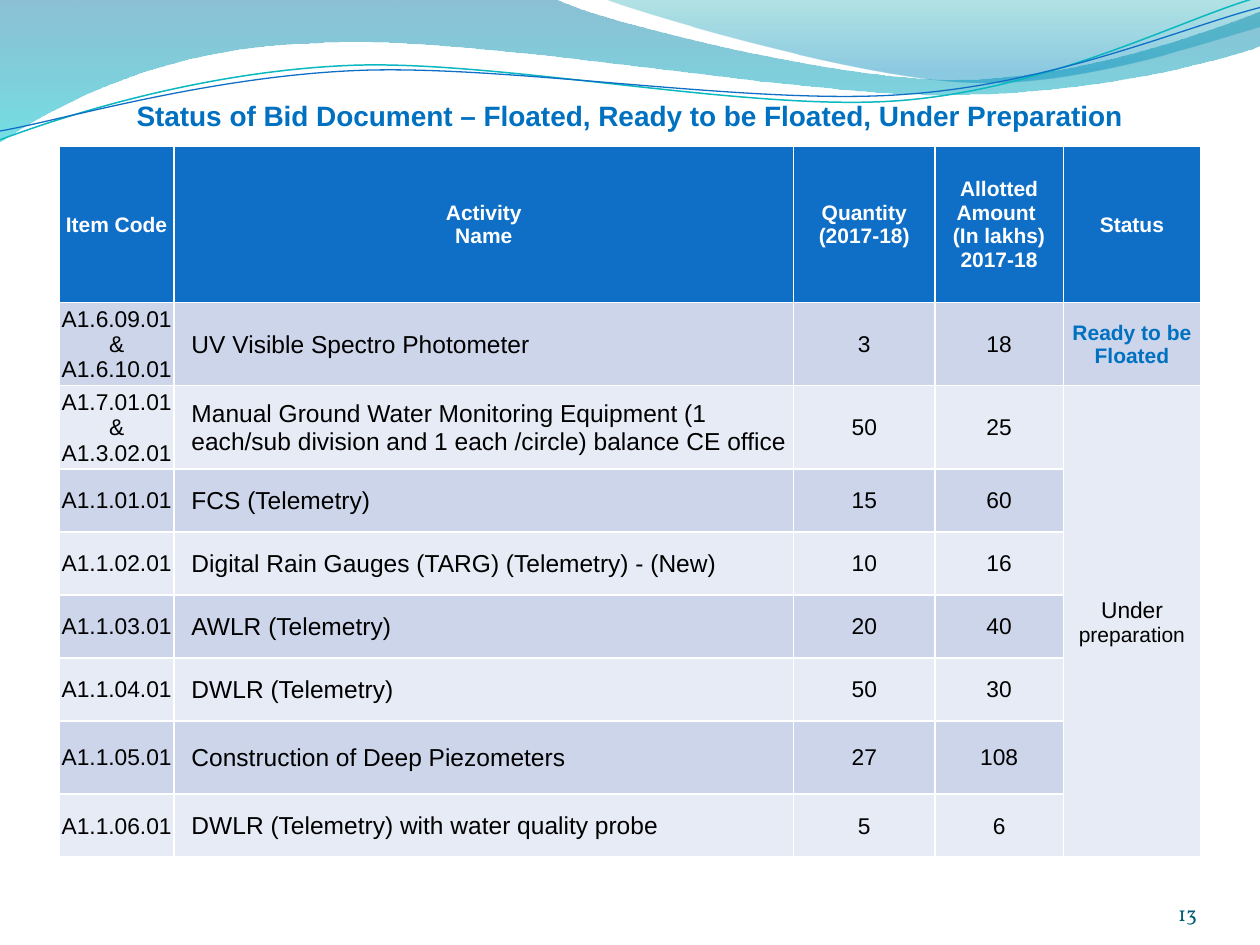
from lxml.etree import SubElement
from pptx import Presentation
from pptx.dml.color import RGBColor
from pptx.enum.text import MSO_ANCHOR, PP_ALIGN
from pptx.oxml import parse_xml
from pptx.oxml.ns import nsdecls, qn
from pptx.util import Inches, Pt

BLUE, ACCENT, BLACK, WHITE = "0F6FC6", "0070C0", "000000", "FFFFFF"
BANDS = ["CCD5EA", "E7EBF5"]
UNITS = 1000  # outline units per inch


def color(code):
    return RGBColor.from_string(code)


def write(frame, text, size, code, bold=False, align=PP_ALIGN.CENTER, font="Arial"):
    """Fill a frame: newline starts a paragraph, | breaks a line, ~ starts a smaller run."""
    for number, line in enumerate(text.split("\n")):
        paragraph = frame.paragraphs[0] if number == 0 else frame.add_paragraph()
        paragraph.alignment = align
        for part_number, part in enumerate(line.split("|")):
            if part_number:
                paragraph.add_line_break()
            for smaller, words in enumerate(part.split("~")):
                run = paragraph.add_run()
                run.text = words
                run.font.name = font
                run.font.size = Pt(size - smaller)
                run.font.bold = bold
                run.font.color.rgb = color(code)


deck = Presentation()
deck.slide_width, deck.slide_height = Inches(10), Inches(7.5)
slide = deck.slides.add_slide(deck.slide_layouts[5])
shapes = slide.shapes

# Wave header: a start point, then straight (2 numbers) or Bezier (6 numbers) pieces
left_wave = [(0, 0), (4.4, -0.01), (4.76, 0.17, 6.64, 0.63, 7.58, 0.63),
             (8.53, 0.63, 9.58, 0.26, 10, 0.09), (10.01, 0.36),
             (9.83, 0.44, 8.7, 0.76, 7.46, 0.75), (6.22, 0.75, 3.82, 0.28, 2.57, 0.34),
             (1.29, 0.36, 0.46, 0.83, -0.01, 1.13)]
right_wave = [(4.79, -0.01), (5.09, 0.11, 6.82, 0.62, 7.69, 0.65),
              (8.56, 0.69, 9.61, 0.32, 10, 0.21), (10, 0)]
teal_line = [(0, 1.11), (0.48, 0.93, 1.58, 0.57, 2.77, 0.52),
             (3.95, 0.47, 5.93, 0.89, 7.13, 0.8), (8.33, 0.71, 9.38, 0.15, 9.98, -0.02)]
blue_line = [(0, 1.04), (0.47, 0.96, 1.64, 0.61, 2.83, 0.56),
             (4.03, 0.51, 5.97, 0.84, 7.17, 0.75), (8.36, 0.67, 9.41, 0.21, 10, 0.06)]

# Each wave has gradient stops (position, colour, opacity) or a line (colour, width)
waves = [(left_wave, [(0, "0074A1", 45), (100, "00C6CF", 55)], None),
         (right_wave, [(0, "00A1A9", 30), (80, "008BBF", 45)], None),
         (teal_line, None, ("0AB8BF", 0.85)),
         (blue_line, None, (BLUE, 0.75))]

for pieces, stops, stroke in waves:
    points = [(piece[i] * UNITS, piece[i + 1] * UNITS)
              for piece in pieces for i in range(0, len(piece), 2)]
    outline = shapes.build_freeform(*points[0], scale=Inches(1) / UNITS)
    outline.add_line_segments(points[1:], close=bool(stops))
    wave = outline.convert_to_shape()
    wave.shadow.inherit = False
    wave.fill.background()

    # Join each run of three points into one Bezier piece
    segments = iter(list(wave._element.iter(qn("a:lnTo"))))
    for piece in pieces[1:]:
        segment = next(segments)
        if len(piece) == 6:
            segment.tag = qn("a:cubicBezTo")
            for _ in range(2):
                extra = next(segments)
                segment.append(extra[0])
                extra.getparent().remove(extra)

    if stops:
        wave.line.fill.background()
        stop_xml = "".join(
            f'<a:gs pos="{place * 1000}"><a:srgbClr val="{code}">'
            f'<a:alpha val="{opacity * 1000}"/></a:srgbClr></a:gs>'
            for place, code, opacity in stops)
        gradient = parse_xml(f'<a:gradFill {nsdecls("a")}><a:gsLst>{stop_xml}</a:gsLst>'
                             '<a:lin ang="5400000" scaled="0"/></a:gradFill>')
        properties = wave._element.spPr
        properties.replace(properties.find(qn("a:noFill")), gradient)
    else:
        wave.line.color.rgb = color(stroke[0])
        wave.line.width = Pt(stroke[1])

# Page number
page_number = shapes.add_textbox(Inches(8.67), Inches(6.95), Inches(0.83), Inches(0.4)).text_frame
page_number.margin_left = page_number.margin_right = 0
page_number.margin_top = page_number.margin_bottom = 0
page_number.word_wrap = True
page_number.vertical_anchor = MSO_ANCHOR.BOTTOM
write(page_number, "13", 12, "045D75", align=PP_ALIGN.RIGHT, font="Vollkorn")

# Bid status table
headers = ["Item Code", "Activity\nName", "Quantity|(2017-18)",
           "Allotted Amount \n(In lakhs) 2017-18", "Status"]
items = [
    ("A1.6.09.01 & A1.6.10.01", "UV Visible Spectro Photometer", "3", "18", "Ready to be Floated"),
    ("A1.7.01.01 & A1.3.02.01", "Manual Ground Water Monitoring Equipment (1 each/sub division "
     "and 1 each /circle) balance CE office", "50", "25", "Under ~preparation"),
    ("A1.1.01.01", "FCS (Telemetry)", "15", "60", ""),
    ("A1.1.02.01", "Digital Rain Gauges (TARG) (Telemetry) - (New)", "10", "16", ""),
    ("A1.1.03.01", "AWLR (Telemetry)", "20", "40", ""),
    ("A1.1.04.01", "DWLR (Telemetry)", "50", "30", ""),
    ("A1.1.05.01", "Construction of Deep Piezometers", "27", "108", ""),
    ("A1.1.06.01", "DWLR (Telemetry) with water quality probe", "5", "6", ""),
]
column_widths = [0.91, 4.92, 1.12, 1.02, 1.09]
row_heights = [1.24] + [0.61] * 2 + [0.5] * 4 + [0.58, 0.5]

bids = shapes.add_table(len(row_heights), len(column_widths), Inches(0.47), Inches(1.16),
                        Inches(sum(column_widths)), Inches(sum(row_heights))).table
for column, width in zip(bids.columns, column_widths):
    column.width = Inches(width)
for row, height in zip(bids.rows, row_heights):
    row.height = Inches(height)
bids.cell(2, 4).merge(bids.cell(8, 4))

for r, texts in enumerate([headers] + items):
    for c, text in enumerate(texts):
        cell = bids.cell(r, c)
        cell.margin_left = cell.margin_right = cell.margin_top = Inches(0.01)
        cell.margin_bottom = 0
        cell.vertical_anchor = MSO_ANCHOR.MIDDLE
        for side in ("lnL", "lnR", "lnT", "lnB"):
            border = SubElement(cell._tc.get_or_add_tcPr(), qn(f"a:{side}"), w=str(Pt(1)))
            SubElement(SubElement(border, qn("a:solidFill")), qn("a:srgbClr"), val=WHITE)
        cell.fill.solid()
        # The merged status cell keeps the band of its first row
        band = BANDS[1] if cell.is_spanned else BANDS[(r - 1) % 2]
        cell.fill.fore_color.rgb = color(band if r else BLUE)
        if not text:
            continue
        if r == 0:
            write(cell.text_frame, text, 12, WHITE, bold=True)
        elif c == 1:
            write(cell.text_frame, text, 14, BLACK, align=PP_ALIGN.LEFT)
            indent = cell.text_frame.paragraphs[0]._p.get_or_add_pPr()
            indent.set("marL", str(Inches(0.13)))
            indent.set("indent", "0")
        elif text.startswith("Ready"):
            write(cell.text_frame, text, 12, ACCENT, bold=True)
        else:
            write(cell.text_frame, text, 13, BLACK)

# Title, in front of the waves
title = shapes.title
title.left, title.top, title.width, title.height = map(Inches, (0.39, 0.7, 9.22, 0.35))
heading = title.text_frame
heading.margin_left = heading.margin_right = heading.margin_bottom = 0
heading.margin_top = Inches(0.05)
heading.word_wrap = True
heading.vertical_anchor = MSO_ANCHOR.BOTTOM
write(heading, "Status of Bid Document – Floated, Ready to be Floated, Under Preparation",
      16, ACCENT, bold=True)
shapes._spTree.append(title._element)

deck.save("out.pptx")
